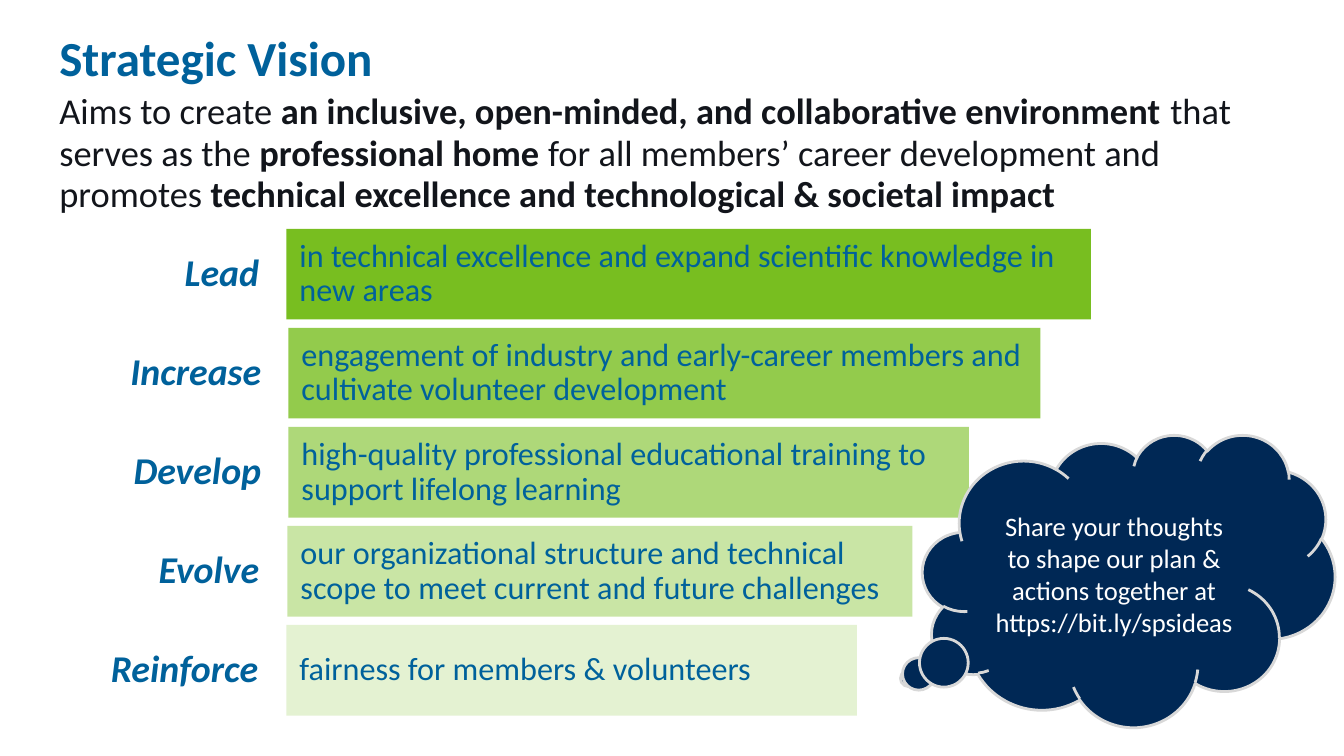
from lxml.etree import SubElement
from pptx import Presentation
from pptx.dml.color import RGBColor
from pptx.enum.shapes import MSO_SHAPE
from pptx.enum.text import MSO_ANCHOR, PP_ALIGN
from pptx.oxml.ns import qn
from pptx.util import Inches, Pt

COLORS = {
    "blue": "00619B",
    "ink": "12151B",
    "green": "78BE20",
    "navy": "002855",
    "gray": "D8D8D8",
    "white": "FFFFFF",
}
ROW_TOP, ROW_STEP, ROW_HEIGHT = 2.27, 0.9825, 0.9
ROWS = [
    ("Lead", 1.06, 1.64, 2.84, 7.98,
     "in technical excellence and expand scientific knowledge in new areas"),
    ("Increase", 0.34, 2.38, 2.86, 7.46,
     "engagement of industry and early-career members and cultivate volunteer development"),
    ("Develop", 0.4, 2.32, 2.86, 6.75,
     "high-quality professional educational training to support lifelong learning"),
    ("Evolve", 0.78, 1.92, 2.85, 6.2,
     "our organizational structure and technical scope to meet current and future challenges"),
    ("Reinforce", 0.78, 1.91, 2.84, 5.66,
     "fairness for members & volunteers"),
]
MISSION = [
    ("Aims to create ", False),
    ("an inclusive, open-minded, and collaborative environment", True),
    (" that \nserves as the ", False),
    ("professional home", True),
    (" for all members’ career development and \npromotes ", False),
    ("technical excellence and technological & societal impact", True),
]


def rgb(name):
    return RGBColor.from_string(COLORS[name])


def write(sp, text, size, color="blue", bold=False, italic=False,
          align=PP_ALIGN.LEFT, anchor=MSO_ANCHOR.MIDDLE, spacing=0.9,
          inset=(0.13, 0.07)):
    tf = sp.text_frame
    tf.word_wrap = True
    tf.vertical_anchor = anchor
    tf.margin_left = tf.margin_right = Inches(inset[0])
    tf.margin_top = tf.margin_bottom = Inches(inset[1])
    p = tf.paragraphs[0]
    p.alignment = align
    p.line_spacing = spacing
    parts = [(text, bold)] if isinstance(text, str) else text
    for part, heavy in parts:
        for i, line in enumerate(part.split("\n")):
            if i:
                p.add_line_break()
            r = p.add_run()
            r.text = line
            r.font.name = "Calibri"
            r.font.size = Pt(size)
            r.font.bold = heavy
            r.font.italic = italic
            r.font.color.rgb = rgb(color)


def add_text(s, box, text, size, **style):
    sp = s.shapes.add_textbox(*map(Inches, box))
    write(sp, text, size, **style)


def add_filled(s, kind, box, fill, opacity=100):
    sp = s.shapes.add_shape(kind, *map(Inches, box))
    sp.shadow.inherit = False
    sp.fill.solid()
    sp.fill.fore_color.rgb = rgb(fill)
    sp.line.fill.background()
    if opacity < 100:
        color = sp.fill._xPr.find(qn("a:solidFill"))[0]
        SubElement(color, qn("a:alpha"), val=str(opacity * 1000))
    return sp


def add_row(s, index, label, label_left, label_width, bar_left, bar_width, text):
    top = ROW_TOP + index * ROW_STEP
    add_text(s, (label_left, top, label_width, ROW_HEIGHT), label, 27,
             bold=True, italic=True, align=PP_ALIGN.RIGHT)
    bar = add_filled(s, MSO_SHAPE.RECTANGLE,
                     (bar_left, top, bar_width, ROW_HEIGHT),
                     "green", 100 - 20 * index)
    write(bar, text, 23)


def add_cloud(s, box, text):
    cloud = add_filled(s, MSO_SHAPE.CLOUD_CALLOUT, box, "navy")
    cloud.adjustments[0] = -0.534
    cloud.adjustments[1] = 0.335
    cloud.line.color.rgb = rgb("gray")
    cloud.line.width = Pt(2)
    write(cloud, text, 19, color="white", align=PP_ALIGN.CENTER, spacing=1.0)


def main():
    prs = Presentation()
    prs.slide_width = Inches(13.33)
    prs.slide_height = Inches(7.5)
    s = prs.slides.add_slide(prs.slide_layouts[6])
    heading = {"anchor": MSO_ANCHOR.TOP, "inset": (0.1, 0.05)}
    add_text(s, (0.49, 0.29, 9.46, 0.59), "Strategic Vision", 35,
             bold=True, **heading)
    add_text(s, (0.49, 0.86, 12.68, 1.41), MISSION, 26, color="ink",
             spacing=0.95, **heading)
    for index, row in enumerate(ROWS):
        add_row(s, index, *row)
    add_cloud(s, (9.15, 4.31, 4.09, 2.9),
              "Share your thoughts to shape our plan & actions together at "
              "https://bit.ly/spsideas")
    prs.save("out.pptx")


if __name__ == "__main__":
    main()
